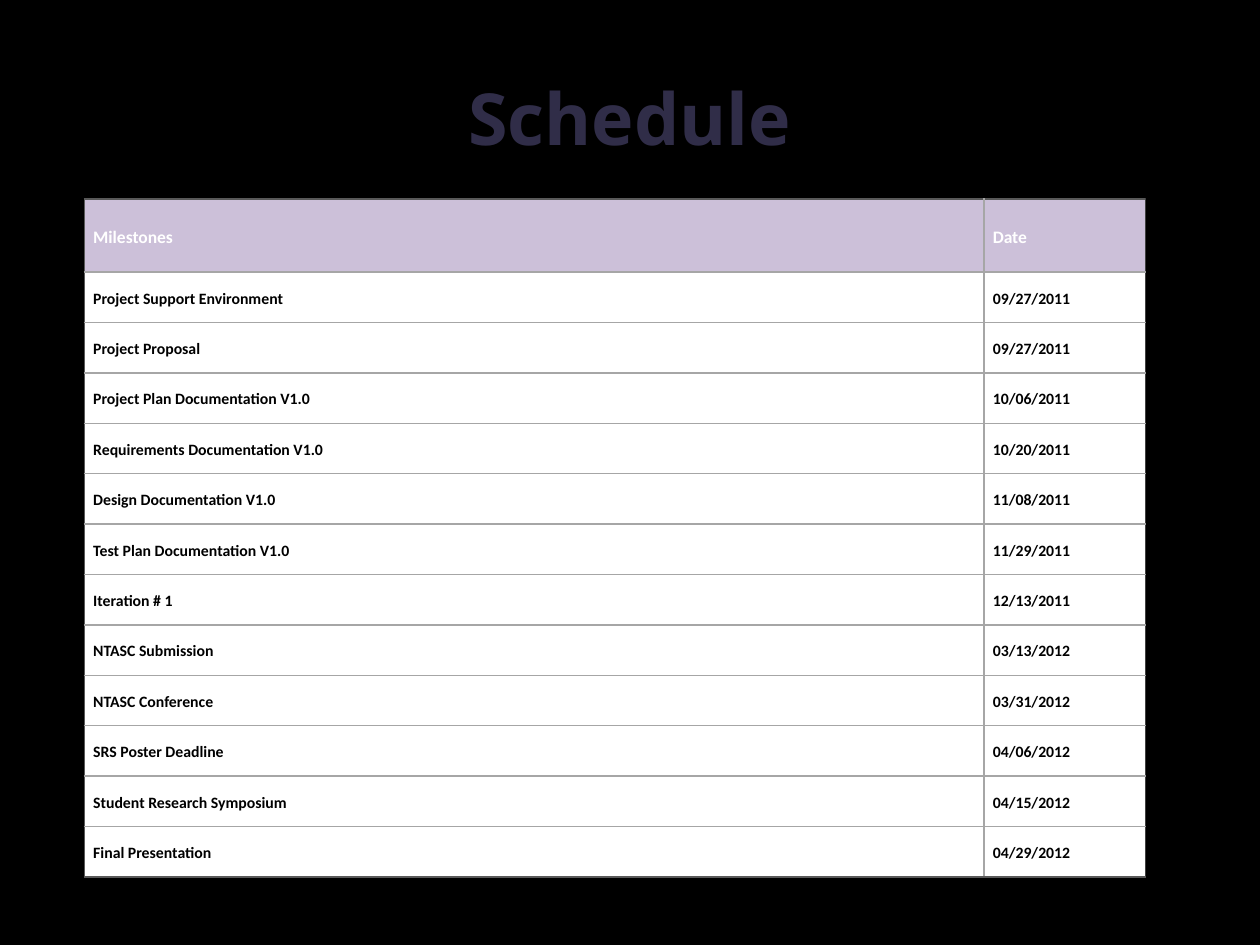
from lxml import etree
from pptx import Presentation, util as u
from pptx.dml.color import RGBColor
from pptx.enum import text
from pptx.oxml import ns

COLORS = {
    "background": "000000", "title": "302D48", "header": "CCC0D9", "row": "FFFFFF",
    "header_text": "FFFFFF", "row_text": "000000",
    "grid": "A6A6A6", "edge": "595959", "right_edge": "404040",
}
WIDTH, HEIGHT = u.Inches(10), u.Inches(7.5)
COLUMNS = [u.Inches(7.14), u.Inches(1.28)]
HEADER_HEIGHT, ROW_HEIGHT = u.Inches(0.58), u.Inches(0.4)
SCHEDULE = [
    ("Milestones", "Date"),
    ("Project Support Environment", "09/27/2011"),
    ("Project Proposal", "09/27/2011"),
    ("Project Plan Documentation V1.0", "10/06/2011"),
    ("Requirements Documentation V1.0", "10/20/2011"),
    ("Design Documentation V1.0", "11/08/2011"),
    ("Test Plan Documentation V1.0", "11/29/2011"),
    ("Iteration # 1", "12/13/2011"),
    ("NTASC Submission", "03/13/2012"),
    ("NTASC Conference", "03/31/2012"),
    ("SRS Poster Deadline", "04/06/2012"),
    ("Student Research Symposium", "04/15/2012"),
    ("Final Presentation", "04/29/2012"),
]


def color(name):
    return RGBColor.from_string(COLORS[name])


def write(frame, words, *, size, ink, font="Calibri", align=text.PP_ALIGN.LEFT, spacing=None):
    frame.vertical_anchor = text.MSO_ANCHOR.MIDDLE
    para = frame.paragraphs[0]
    para.alignment = align
    para.line_spacing = spacing
    span = para.add_run()
    span.text = words
    span.font.name, span.font.size, span.font.bold = font, u.Pt(size), True
    span.font.color.rgb = color(ink)


def add_borders(cell, **sides):
    properties = cell._tc.get_or_add_tcPr()
    for side in "LRTB":
        line = etree.SubElement(properties, ns.qn(f"a:ln{side}"), w=str(u.Pt(1)))
        fill = etree.SubElement(line, ns.qn("a:solidFill"))
        etree.SubElement(fill, ns.qn("a:srgbClr"), val=COLORS[sides[side]])


def fill_cell(cell, words, *, header, last_row, last_column):
    cell.margin_left = cell.margin_right = u.Inches(0.07)
    cell.margin_top = cell.margin_bottom = 0
    cell.vertical_anchor = text.MSO_ANCHOR.MIDDLE
    add_borders(
        cell,
        L="grid" if last_column else "edge",
        R="right_edge" if last_column else "grid",
        T="edge" if header else "grid",
        B="edge" if last_row else "grid",
    )
    cell.fill.solid()
    cell.fill.fore_color.rgb = color("header" if header else "row")
    write(cell.text_frame, words, size=10 if header else 9,
          ink="header_text" if header else "row_text", spacing=1.15)


def add_title(page, words):
    title = page.shapes.title
    title.left, title.top = int(WIDTH * 0.05), int(HEIGHT * 0.04)
    title.width, title.height = int(WIDTH * 0.9), u.Inches(1.25)
    write(title.text_frame, words, size=41, ink="title", font="Open Sans",
          align=text.PP_ALIGN.CENTER)


def add_schedule(page, rows):
    last_row, last_column = len(rows) - 1, len(COLUMNS) - 1
    table = page.shapes.add_table(
        len(rows), len(COLUMNS), u.Inches(0.67), u.Inches(1.58),
        sum(COLUMNS), HEADER_HEIGHT + last_row * ROW_HEIGHT,
    ).table
    for column, width in zip(table.columns, COLUMNS):
        column.width = width
    for r, entries in enumerate(rows):
        table.rows[r].height = ROW_HEIGHT if r else HEADER_HEIGHT
        for c, words in enumerate(entries):
            fill_cell(table.cell(r, c), words, header=r == 0,
                      last_row=r == last_row, last_column=c == last_column)


def main():
    """Build the project schedule slide."""
    deck = Presentation()
    deck.slide_width, deck.slide_height = WIDTH, HEIGHT
    page = deck.slides.add_slide(deck.slide_layouts.get_by_name("Title Only"))
    page.background.fill.solid()
    page.background.fill.fore_color.rgb = color("background")
    add_title(page, "Schedule")
    add_schedule(page, SCHEDULE)
    deck.save("out.pptx")


if __name__ == "__main__":
    main()
